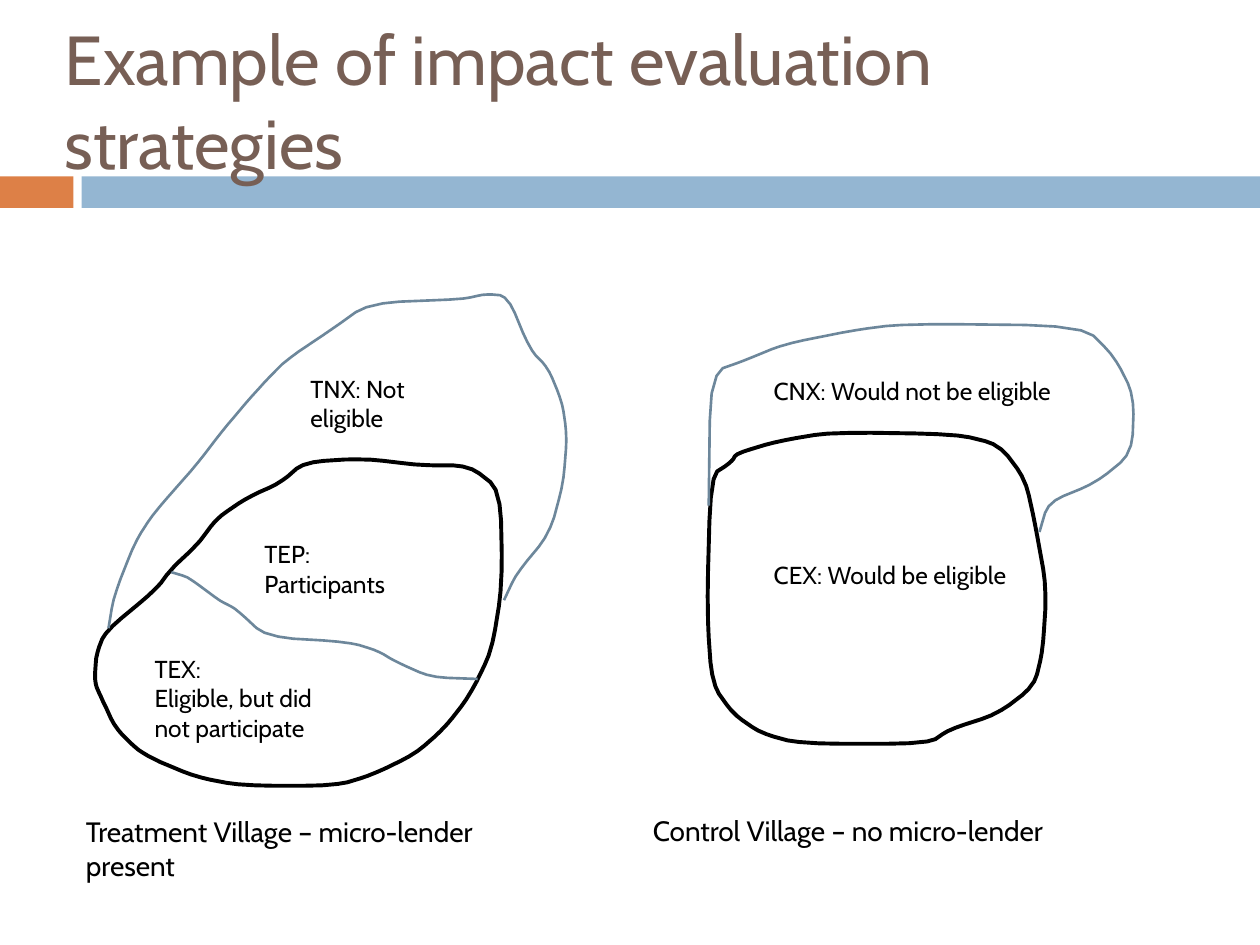
from itertools import pairwise

from pptx import Presentation
from pptx.dml.color import RGBColor
from pptx.enum.shapes import MSO_SHAPE
from pptx.enum.text import MSO_ANCHOR
from pptx.util import Pt

RECT = MSO_SHAPE.RECTANGLE
TOP, MID = MSO_ANCHOR.TOP, MSO_ANCHOR.MIDDLE
WIDE, HIGH = 720, 540
FONT = "Cabin"
BLACK, WHITE, SLATE, BROWN = "000000", "FFFFFF", "6D879B", "775F55"
ORANGE, BLUE = "DD8047", "94B6D2"

CUT = 0.2     # share of each side cut off when a corner is rounded
ROUNDS = 2    # times the corners are rounded
FINE = 10     # drawing units in a point

# Line colour, line width and fill of the two kinds of outline
GROUP = (BLACK, 2.25, WHITE)    # closed: the eligible people of a village
BORDER = (SLATE, 1.5, None)     # open: a border joined to a group

# Corners of each outline in points, back to front; add_blob rounds them.
BLOBS = {
    "control eligible": (GROUP, [
        (406, 272), (418, 264), (421, 259), (445, 252), (475, 247),
        (546, 248), (571, 254), (586, 274), (592, 302), (598, 336),
        (596, 371), (591, 392), (570, 408), (542, 417), (531, 425),
        (457, 425), (435, 419), (419, 408), (407, 391), (404, 352)]),
    "control not eligible": (BORDER, [
        (405, 289), (406, 213), (428, 205), (447, 197), (486, 189),
        (516, 185), (619, 186), (637, 204), (648, 226), (647, 259),
        (626, 276), (599, 287), (594, 304)]),
    "treatment eligible": (GROUP, [
        (60, 361), (89, 337), (98, 325), (113, 311), (124, 296),
        (142, 284), (160, 276), (174, 264), (208, 262), (241, 266),
        (268, 266), (286, 280), (287, 334), (281, 372), (268, 398),
        (254, 416), (237, 431), (212, 443), (192, 449), (138, 449),
        (112, 444), (88, 434), (78, 428), (66, 416), (58, 399),
        (54, 390), (55, 374)]),
    "participants": (BORDER, [
        (98, 327), (108, 330), (125, 343), (135, 348), (152, 364),
        (200, 367), (216, 372), (226, 378), (246, 387), (273, 388)]),
    "treatment not eligible": (BORDER, [
        (62, 359), (65, 341), (77, 310), (88, 293), (112, 266),
        (128, 245), (146, 224), (163, 206), (187, 190), (211, 173),
        (265, 171), (277, 168), (290, 169), (303, 200), (313, 210),
        (321, 229), (324, 248), (322, 276), (314, 305), (295, 328),
        (288, 343)]),
}

# Left, top, width and lines of each label
LABELS = [
    (170.3, 210, 111.6, ["TNX: Not eligible"]),
    (144, 304.6, 111.6, ["TEP: Participants"]),
    (81.2, 370, 111.6, ["TEX:", "Eligible, but did not participate"]),
    (435, 211.5, 183, ["CNX: Would not be eligible"]),
    (435, 316.5, 152.6, ["CEX: Would be eligible"]),
]
NAMES = [
    (42, 462, 282, ["Treatment Village – micro-lender present"]),
    (366, 461.5, 270, ["Control Village – no micro-lender"]),
]


def color(code):
    return RGBColor.from_string(code)


def paint(shape, fill):
    """Give a shape a plain fill, or none, and no shadow."""
    shape.shadow.inherit = False
    if fill:
        shape.fill.solid()
        shape.fill.fore_color.rgb = color(fill)
    else:
        shape.fill.background()


def blend(start, end, share):
    return tuple(a + (b - a) * share for a, b in zip(start, end))


def smooth(dots, closed):
    """Round the corners by replacing each with two dots on its sides."""
    for _ in range(ROUNDS):
        ring = dots + dots[:1] if closed else dots
        cuts = [blend(a, b, share) for a, b in pairwise(ring)
                for share in (CUT, 1 - CUT)]
        dots = cuts if closed else [dots[0], *cuts[1:-1], dots[-1]]
    return dots


def add_blob(slide, style, dots):
    ink, weight, fill = style
    closed = fill is not None
    first, *rest = [(round(x * FINE), round(y * FINE))
                    for x, y in smooth(dots, closed)]
    pen = slide.shapes.build_freeform(*first, scale=Pt(1) / FINE)
    pen.add_line_segments(rest, close=closed)
    blob = pen.convert_to_shape()
    paint(blob, fill)
    blob.line.color.rgb = color(ink)
    blob.line.width = Pt(weight)


def add_band(slide):
    """Draw the two bars under the title, with a gap between them."""
    top, high, split, gap = 100.8, 18, 42, 4.6
    right = split + gap
    for left, wide, fill in ((0, split, ORANGE), (right, WIDE - right, BLUE)):
        bar = slide.shapes.add_shape(
            RECT, Pt(left), Pt(top), Pt(wide), Pt(high))
        paint(bar, fill)
        bar.line.fill.background()


def add_text(slide, box, lines, size, ink=BLACK, anchor=TOP):
    frame = slide.shapes.add_textbox(*map(Pt, box)).text_frame
    frame.word_wrap = True
    frame.vertical_anchor = anchor
    for i, line in enumerate(lines):
        para = frame.add_paragraph() if i else frame.paragraphs[0]
        run = para.add_run()
        run.text = line
        run.font.name = FONT
        run.font.size = Pt(size)
        run.font.color.rgb = color(ink)


def add_notes(slide, notes, size):
    """Add text boxes as high as their lines at one size."""
    for left, top, wide, lines in notes:
        high = 7.2 + 1.2 * size * len(lines)
        add_text(slide, (left, top, wide, high), lines, size)


def main():
    deck = Presentation()
    deck.slide_width, deck.slide_height = Pt(WIDE), Pt(HIGH)
    slide = deck.slides.add_slide(deck.slide_layouts[6])
    add_band(slide)
    add_text(slide, (30, 18, 672, 78),
             ["Example of impact evaluation strategies"], 39.6, BROWN, MID)
    for style, dots in BLOBS.values():
        add_blob(slide, style, dots)
    add_notes(slide, LABELS, 14)
    add_notes(slide, NAMES, 16)
    deck.save("out.pptx")


if __name__ == "__main__":
    main()
